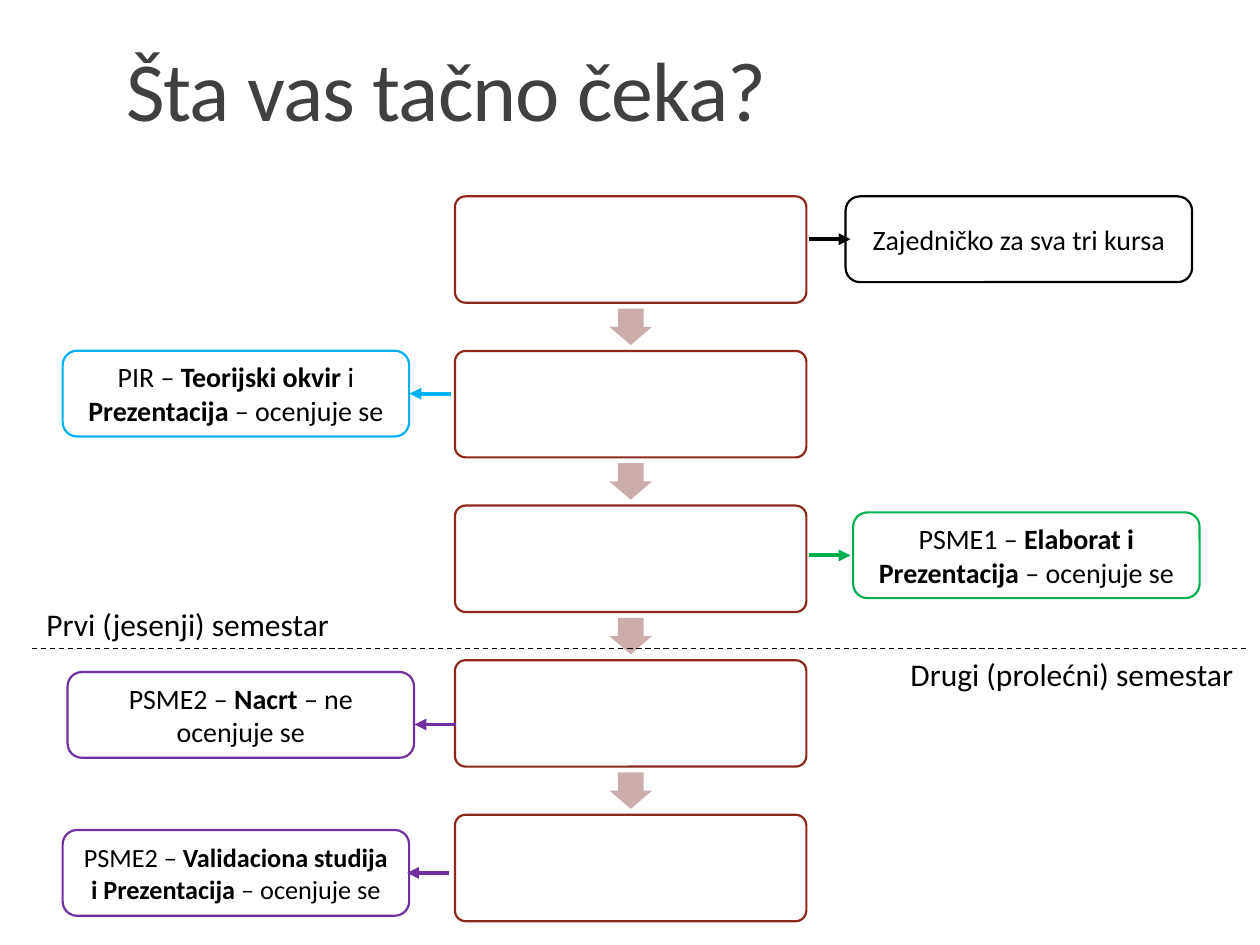
from dataclasses import dataclass

import pptx
import pptx.dml.color
import pptx.enum.dml
import pptx.enum.shapes
import pptx.enum.text
import pptx.oxml.ns
import pptx.util
from lxml import etree

Pt = pptx.util.Pt
Shapes = pptx.enum.shapes.MSO_SHAPE
Align = pptx.enum.text.PP_ALIGN
Anchor = pptx.enum.text.MSO_ANCHOR
AutoSize = pptx.enum.text.MSO_AUTO_SIZE
qn = pptx.oxml.ns.qn

FONT = "Calibri"
BLACK, WHITE = "000000", "FFFFFF"
BLUE, GREEN, PURPLE = "00B0F0", "00B050", "7030A0"
STEP_LINE, STEP_ARROW = "8D291C", "CBADAC"

# Column of steps
STEP_COUNT, STEP_PITCH = 5, 88.35
STEP_LEFT, STEP_TOP, STEP_WIDTH, STEP_HEIGHT = 260, 112.2, 200.8, 60.8
ARROW_LENGTH, ARROW_BREADTH = 20.8, 24.4

NOTE_WIDTH, NOTE_HEIGHT = 198, 49


@dataclass
class Note:
    left: float
    top: float
    color: str
    runs: list[tuple[str, bool]]  # text, bold
    size: float = 16


@dataclass
class Link:
    start: float
    end: float
    y: float
    color: str


@dataclass
class Label:
    left: float
    top: float
    width: float
    text: str


NOTES = [
    Note(483.2, 112.2, BLACK, [("Zajedničko za sva tri kursa", False)]),
    Note(35.8, 200.4, BLUE, [("PIR – ", False), ("Teorijski okvir ", True), ("i ", False),
                             ("Prezentacija", True), (" – ocenjuje se", False)]),
    Note(487.5, 292.8, GREEN, [("PSME1 – ", False), ("Elaborat i Prezentacija ", True),
                               ("– ocenjuje se", False)]),
    Note(38.6, 384, PURPLE, [("PSME2 – ", False), ("Nacrt ", True),
                             ("– ne ocenjuje se", False)]),
    Note(35.8, 474.3, PURPLE, [("PSME2 – ", False), ("Validaciona studija i Prezentacija ", True),
                               ("– ocenjuje se", False)], 15),
]
LINKS = [
    Link(257.8, 234, 225, BLUE),
    Link(260.6, 236.9, 414, PURPLE),
    Link(256.5, 232.6, 498.8, PURPLE),
    Link(462.2, 486, 317.4, GREEN),
    Link(462.2, 486, 136.7, BLACK),
]
LABELS = [
    Label(19.4, 342, 178, "Prvi (jesenji) semestar"),
    Label(513.2, 370.8, 201.6, "Drugi (prolećni) semestar"),
]


def rgb(color: str) -> pptx.dml.color.RGBColor:
    return pptx.dml.color.RGBColor.from_string(color)


def add_run(paragraph, text: str, size: float, color: str = BLACK, bold: bool = False):
    run = paragraph.add_run()
    run.text = text
    run.font.name = FONT
    run.font.size = Pt(size)
    run.font.bold = bold
    run.font.color.rgb = rgb(color)
    return run


def add_box(slide, kind, left: float, top: float, width: float, height: float,
            fill: str, line: str | None = None):
    shape = slide.shapes.add_shape(kind, Pt(left), Pt(top), Pt(width), Pt(height))
    shape.shadow.inherit = False
    shape.fill.solid()
    shape.fill.fore_color.rgb = rgb(fill)
    if line:
        shape.line.color.rgb = rgb(line)
        shape.line.width = Pt(1.25)
    else:
        shape.line.fill.background()
    return shape


def add_line(slide, start: float, end: float, y: float, color: str, width: float):
    connector = slide.shapes.add_connector(
        pptx.enum.shapes.MSO_CONNECTOR.STRAIGHT, Pt(start), Pt(y), Pt(end), Pt(y))
    connector.line.color.rgb = rgb(color)
    connector.line.width = Pt(width)
    etree.SubElement(connector._element.spPr, qn("a:effectLst"))
    return connector


def add_title(slide, text: str) -> None:
    title = slide.shapes.title
    title.left, title.top, title.width, title.height = Pt(64.8), Pt(22.3), Pt(594), Pt(60.5)
    frame = title.text_frame
    frame.vertical_anchor = Anchor.BOTTOM
    frame.auto_size = AutoSize.NONE
    paragraph = frame.paragraphs[0]
    paragraph.alignment = Align.LEFT
    paragraph.line_spacing = 0.85
    run = add_run(paragraph, text, 48, "404040")
    run.font._element.set("spc", "-50")


def add_steps(slide) -> None:
    center = STEP_LEFT + STEP_WIDTH / 2
    for index in range(STEP_COUNT):
        top = STEP_TOP + index * STEP_PITCH
        step = add_box(slide, Shapes.ROUNDED_RECTANGLE, STEP_LEFT, top,
                       STEP_WIDTH, STEP_HEIGHT, WHITE, STEP_LINE)
        step.adjustments[0] = 0.1
        if index < STEP_COUNT - 1:
            middle = top + (STEP_HEIGHT + STEP_PITCH) / 2
            arrow = add_box(slide, Shapes.RIGHT_ARROW, center - ARROW_LENGTH / 2,
                            middle - ARROW_BREADTH / 2, ARROW_LENGTH, ARROW_BREADTH, STEP_ARROW)
            arrow.rotation = 90
            arrow.adjustments[0] = 0.6


def add_note(slide, note: Note) -> None:
    shape = add_box(slide, Shapes.ROUNDED_RECTANGLE, note.left, note.top,
                    NOTE_WIDTH, NOTE_HEIGHT, WHITE, note.color)
    shape.text_frame.vertical_anchor = Anchor.MIDDLE
    paragraph = shape.text_frame.paragraphs[0]
    paragraph.alignment = Align.CENTER
    for text, bold in note.runs:
        add_run(paragraph, text, note.size, bold=bold)


def add_link(slide, link: Link) -> None:
    connector = add_line(slide, link.start, link.end, link.y, link.color, 2.25)
    etree.SubElement(connector.line._get_or_add_ln(), qn("a:tailEnd"), type="triangle")


def add_label(slide, label: Label) -> None:
    box = slide.shapes.add_textbox(Pt(label.left), Pt(label.top), Pt(label.width), Pt(29))
    box.text_frame.word_wrap = False
    box.text_frame.auto_size = AutoSize.SHAPE_TO_FIT_TEXT
    add_run(box.text_frame.paragraphs[0], label.text, 18)


def main() -> None:
    presentation = pptx.Presentation()
    presentation.slide_width, presentation.slide_height = Pt(720), Pt(540)
    slide = presentation.slides.add_slide(presentation.slide_layouts[5])

    add_title(slide, "Šta vas tačno čeka?")
    add_steps(slide)

    # Course notes and the arrows leading to them
    for note in NOTES:
        add_note(slide, note)
    for link in LINKS:
        add_link(slide, link)

    # Border between the semesters
    border = add_line(slide, 18, 714, 370.6, BLACK, 0.75)
    border.line.dash_style = pptx.enum.dml.MSO_LINE.DASH
    for label in LABELS:
        add_label(slide, label)

    presentation.save("out.pptx")


if __name__ == "__main__":
    main()
